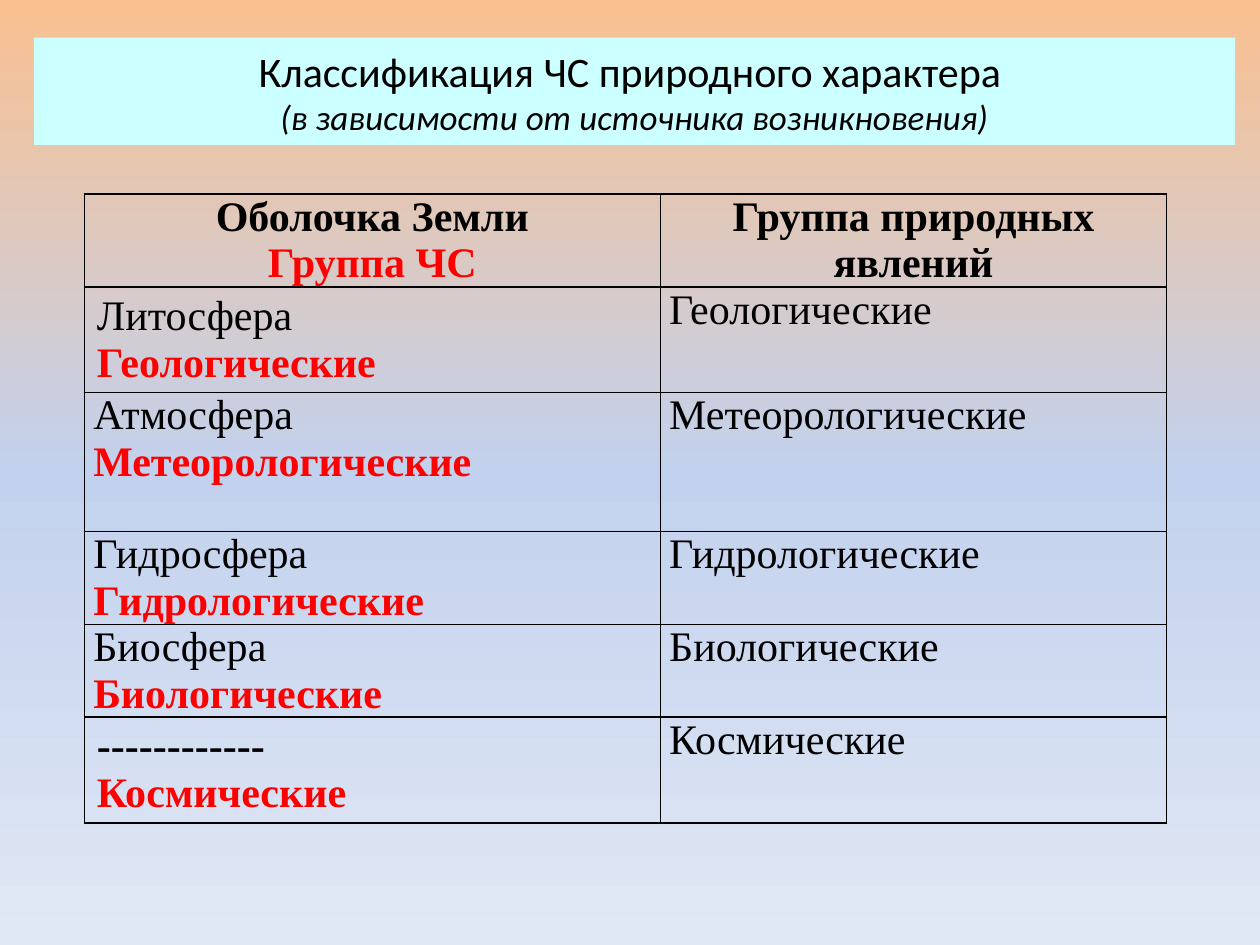
from pptx import Presentation
from pptx.util import Cm, Pt
from pptx.dml.color import RGBColor
from pptx.enum import shapes, text
from pptx.oxml import parse_xml
from pptx.oxml.ns import nsdecls
from copy import deepcopy

BLACK = RGBColor(0x00, 0x00, 0x00)
RED = RGBColor(0xFF, 0x00, 0x00)
CYAN = RGBColor(0xCC, 0xFF, 0xFF)
PEACH = RGBColor(0xFA, 0xC0, 0x90)
BLUE = RGBColor(0xC2, 0xD1, 0xED)
PALE = RGBColor(0xE1, 0xE8, 0xF5)


def add_run(p, words, color=BLACK, **formats):
    r = p.add_run()
    r.text = words
    r.font.color.rgb = color
    for name, value in formats.items():
        setattr(r.font, name, value)


def add_borders(cell):
    tc_pr = cell._tc.get_or_add_tcPr()
    for side in ("lnL", "lnR", "lnT", "lnB"):
        tc_pr.append(parse_xml(
            f'<a:{side} {nsdecls("a")} w="{Pt(1)}"><a:solidFill>'
            f'<a:srgbClr val="{BLACK}"/></a:solidFill></a:{side}>'))


prs = Presentation()
prs.slide_width, prs.slide_height = Cm(25.4), Cm(19.05)
s = prs.slides.add_slide(prs.slide_layouts[6])

# Background gradient, top to bottom
fill = s.background.fill
fill.gradient()
fill.gradient_angle = 270
stops = fill.gradient_stops
first = stops[0]._gs
first.addnext(deepcopy(first))
for stop, position, color in zip(fill.gradient_stops, (0, 0.5, 1), (PEACH, BLUE, PALE)):
    stop.position = position
    stop.color.rgb = color

# Title
sp = s.shapes.add_shape(shapes.MSO_SHAPE.RECTANGLE, Cm(0.69), Cm(0.76), Cm(24.21), Cm(2.16))
sp.shadow.inherit = False
sp.fill.solid()
sp.fill.fore_color.rgb = CYAN
sp.line.fill.background()
tf = sp.text_frame
tf.word_wrap = True
tf.vertical_anchor = text.MSO_ANCHOR.MIDDLE
p = tf.paragraphs[0]
p.alignment = text.PP_ALIGN.CENTER
add_run(p, "Классификация ЧС природного характера ", name="Calibri", size=Pt(24))
p.add_line_break()
add_run(p, "(в зависимости от источника возникновения)", name="Calibri", size=Pt(20), italic=True)

# Table: Earth's shell, emergency group, group of natural phenomena, row height
rows = [
    ("Оболочка Земли", "Группа ЧС", "Группа природных явлений", 1.87),
    ("Литосфера", "Геологические", "Геологические", 2.13),
    ("Атмосфера", "Метеорологические", "Метеорологические", 2.8),
    ("Гидросфера", "Гидрологические", "Гидрологические", 1.87),
    ("Биосфера", "Биологические", "Биологические", 1.87),
    ("------------", "Космические", "Космические", 2.13),
]
widths = (11.61, 10.21)
default_inset_rows = (1, 5)

table = s.shapes.add_table(len(rows), len(widths), Cm(1.7), Cm(3.91),
                           Cm(sum(widths)), Cm(sum(row[-1] for row in rows))).table
table.first_row = table.horz_banding = False
for column, width in zip(table.columns, widths):
    column.width = Cm(width)

for i, (shell, group, phenomena, height) in enumerate(rows):
    table.rows[i].height = Cm(height)
    header = i == 0
    shell_bold = header or shell.startswith("-")
    contents = ([(shell, BLACK, shell_bold), (group, RED, True)],
                [(phenomena, BLACK, header)])
    for j, lines in enumerate(contents):
        cell = table.cell(i, j)
        add_borders(cell)
        cell.fill.background()
        if j == 1 or i not in default_inset_rows:
            cell.margin_left = cell.margin_right = Cm(0.18)
            cell.margin_top = cell.margin_bottom = 0
        tf = cell.text_frame
        for k, (words, color, bold) in enumerate(lines):
            p = tf.add_paragraph() if k else tf.paragraphs[0]
            p.alignment = text.PP_ALIGN.CENTER if header else text.PP_ALIGN.LEFT
            add_run(p, words, color, name="Times New Roman", size=Pt(24), bold=bold)

prs.save("out.pptx")
